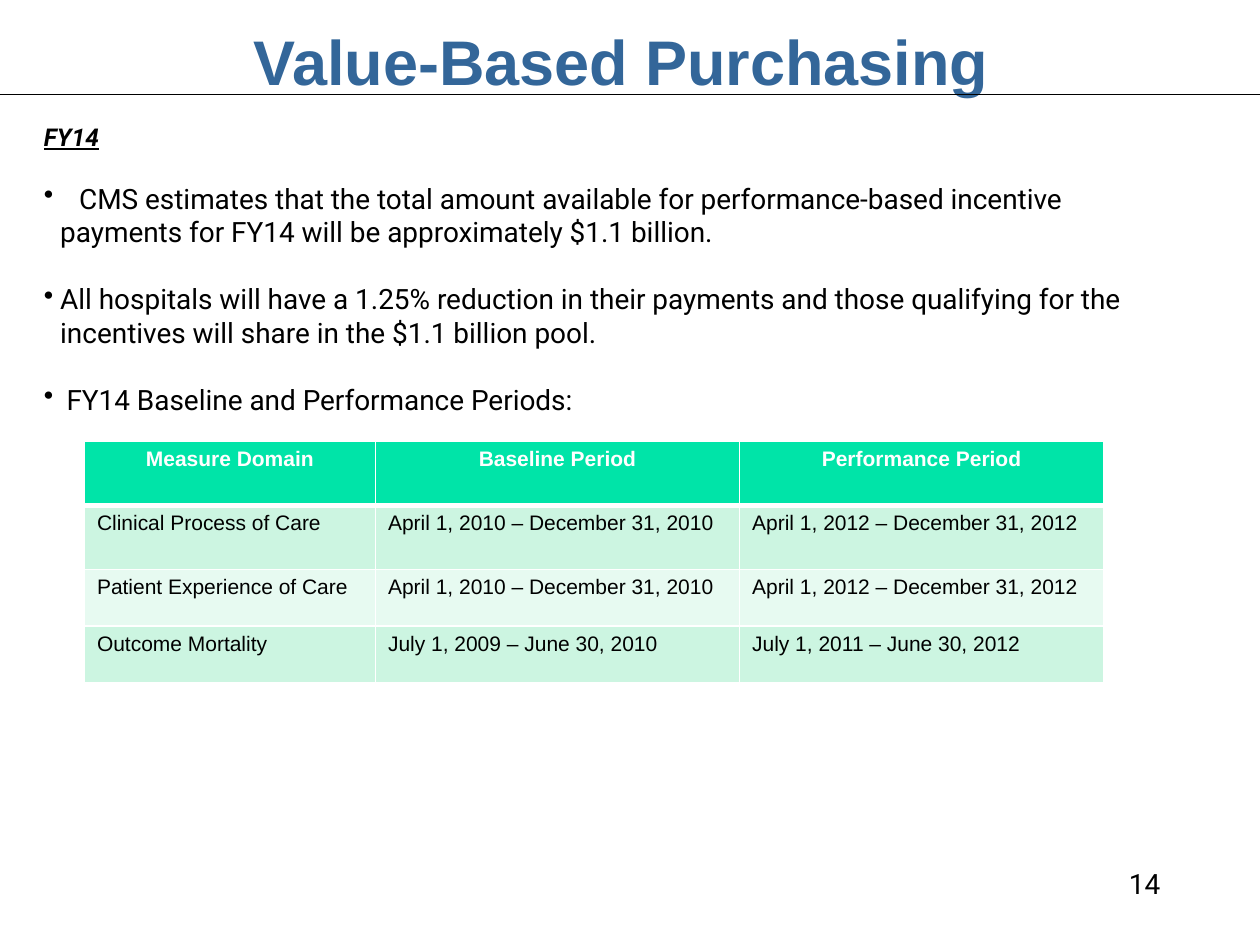
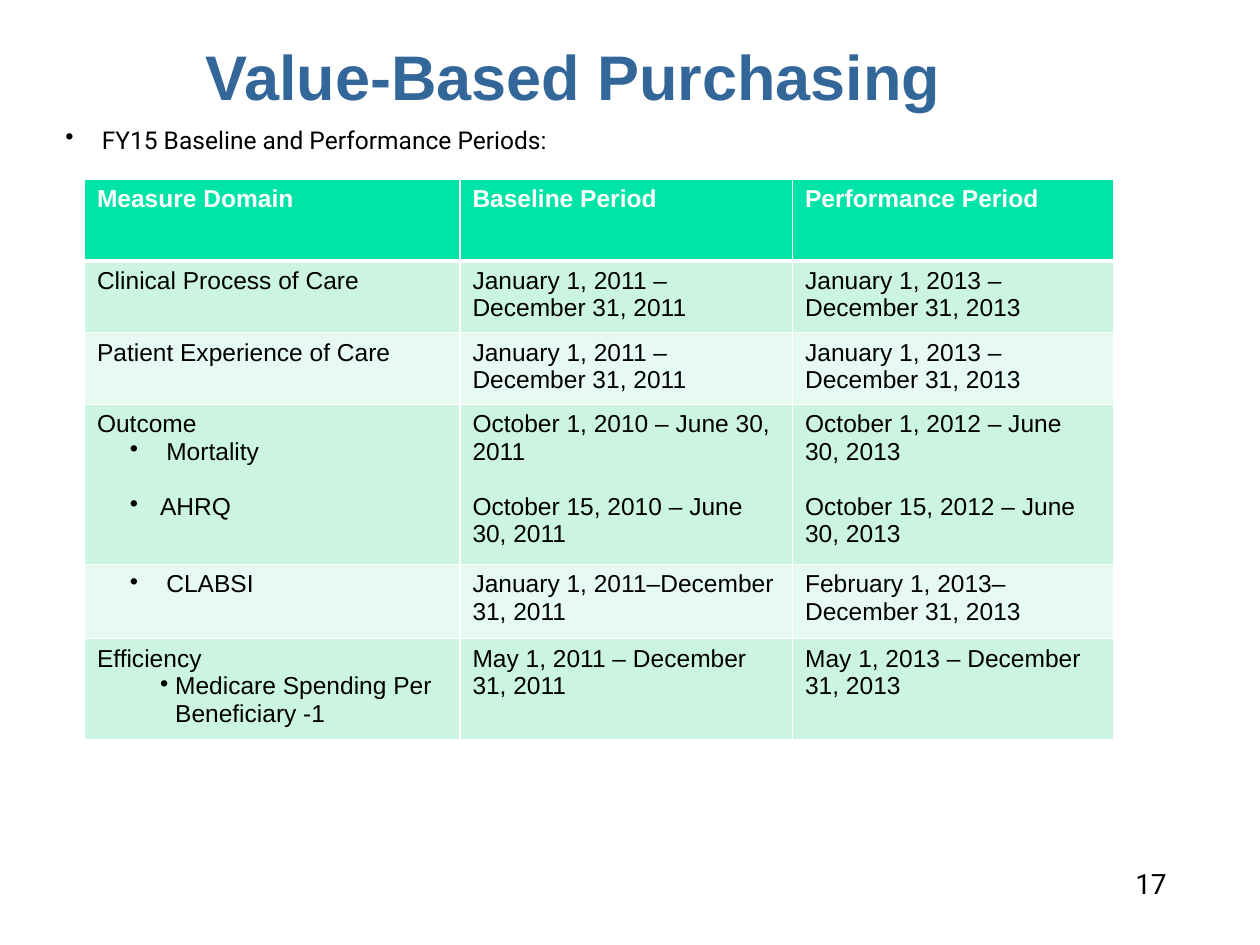
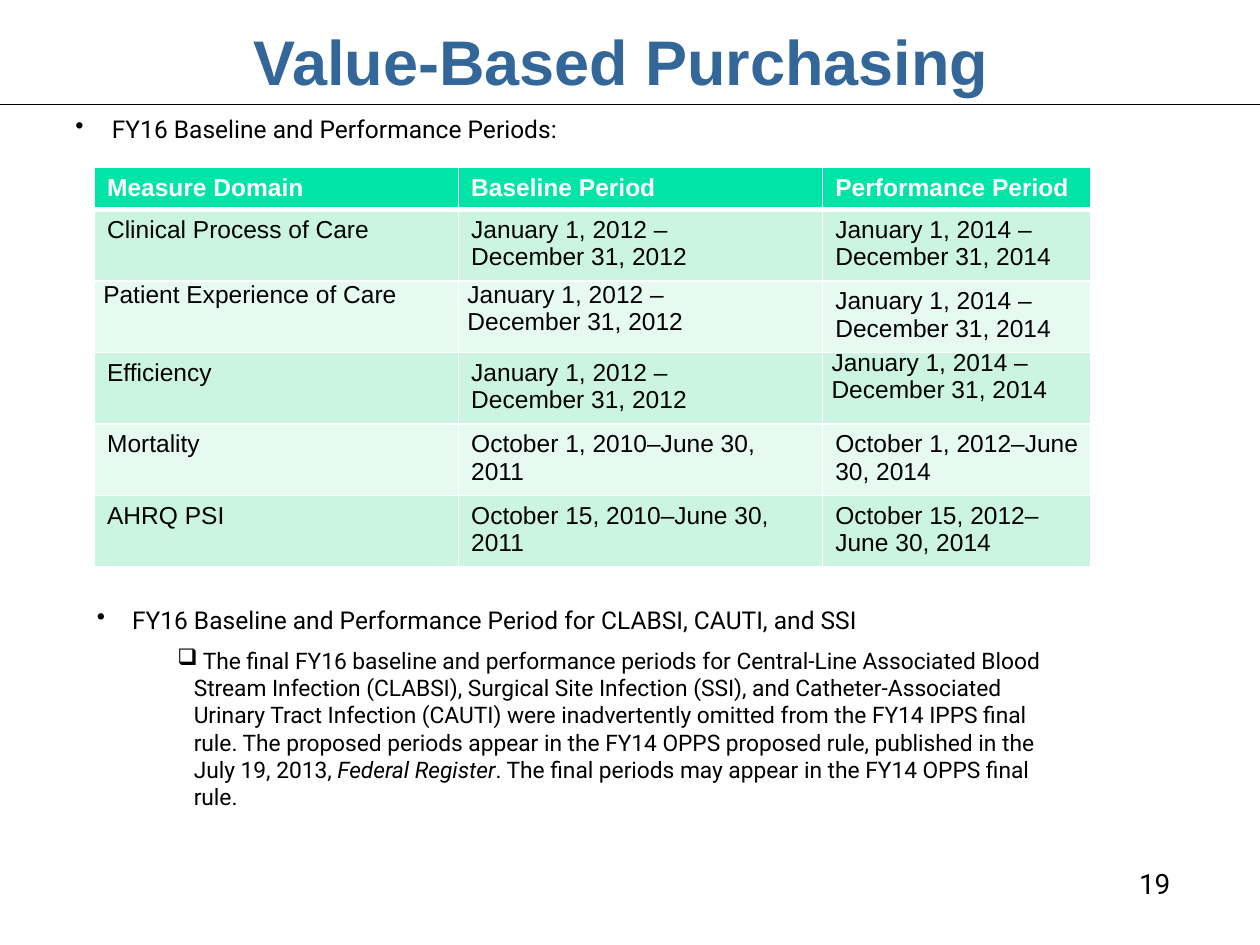
from lxml import etree
from pptx import Presentation
from pptx.dml.color import RGBColor
from pptx.enum import shapes, text
from pptx.oxml.ns import qn
from pptx.util import Inches, Pt

# Shared look
BLUE, BLACK, WHITE = "336699", "000000", "FFFFFF"
HEADER_GREEN, BAND_GREENS = "00E4A8", ("CCF5E1", "E7FAF1")
HEADING_FONT, BODY_FONT = "Arial", "Roboto"
TITLE = "Value-Based Purchasing"
HEADINGS = ["Measure Domain", "Baseline Period", "Performance Period"]
TIGHT = dict(margin=0.07)


def bullet(words, left, hang=None, before=0, mark="•"):
    return dict(words=words, left=left, hang=left if hang is None else hang,
                before=before, mark=mark)


# Content: notes are (box, size, paragraphs)
SLIDES = [
    dict(
        number="14", number_left=8.67, title_at=(0.43, 0.17), rule_y=0.75,
        notes=[((0.25, 0.92, 9.5, 2.5), 16, [
            dict(words="FY14", size=14, bold=True, italic=True, underline=True),
            bullet("CMS estimates that the total amount available for "
                   "performance-based incentive", 0.28, before=17),
            dict(words="payments for FY14 will be approximately $1.1 billion.", left=0.13),
            bullet("All hospitals will have a 1.25% reduction in their payments and those "
                   "qualifying for the incentives will share in the $1.1 billion pool.",
                   0.13, before=19),
            bullet("FY14 Baseline and Performance Periods:", 0.18, before=19),
        ])],
        table=dict(
            at=(0.67, 3.5), size=12, heading_align=text.PP_ALIGN.CENTER,
            widths=[2.31, 2.89, 2.89], heights=[0.51, 0.51, 0.45, 0.45],
            rows=[
                ["Clinical Process of Care", "April 1, 2010 – December 31, 2010",
                 "April 1, 2012 – December 31, 2012"],
                ["Patient Experience of Care", "April 1, 2010 – December 31, 2010",
                 "April 1, 2012 – December 31, 2012"],
                ["Outcome Mortality", "July 1, 2009 – June 30, 2010",
                 "July 1, 2011 – June 30, 2012"],
            ]),
    ),
    dict(
        number="17", number_left=8.72, title_at=(0.05, 0.29),
        notes=[((0.42, 0.94, 9.33, 0.37), 14,
                [bullet("FY15 Baseline and Performance Periods:", 0.29)])],
        table=dict(
            at=(0.67, 1.42), size=14,
            widths=[2.98, 2.64, 2.55], heights=[0.65, 0.57, 0.57, 1.27, 0.59, 0.8],
            rows=[
                ["Clinical Process of Care", "January 1, 2011 – December 31, 2011",
                 "January 1, 2013 – December 31, 2013"],
                ["Patient Experience of Care", "January 1, 2011 – December 31, 2011",
                 "January 1, 2013 – December 31, 2013"],
                [["Outcome", bullet("Mortality", 0.55, 0.29),
                  bullet("AHRQ", 0.5, 0.24, before=15.6)],
                 ["October 1, 2010 – June 30, 2011",
                  dict(words="October 15, 2010 – June 30, 2011", before=15.6)],
                 ["October 1, 2012 – June 30, 2013",
                  dict(words="October 15, 2012 – June 30, 2013", before=15.6)]],
                [[bullet("CLABSI", 0.55, 0.29)], "January 1, 2011–December 31, 2011",
                 "February 1, 2013–December 31, 2013"],
                [["Efficiency", bullet("Medicare Spending Per Beneficiary -1", 0.62, 0.12)],
                 "May 1, 2011 – December 31, 2011", "May 1, 2013 – December 31, 2013"],
            ]),
    ),
    dict(
        number="19", number_left=8.75, title_at=(0.43, 0.17), rule_y=0.83,
        notes=[
            ((0.5, 0.86, 8.25, 0.37), 14,
             [bullet("FY16 Baseline and Performance Periods:", 0.29)]),
            ((0.67, 4.75, 7.83, 0.34), 14,
             [bullet("FY16 Baseline and Performance Period for CLABSI, CAUTI, and SSI", 0.28)]),
            ((0.75, 5.08, 7.83, 1.41), 13, [bullet([
                (" The final FY16 baseline and performance periods for Central-Line Associated "
                 "Blood Stream Infection (CLABSI), Surgical Site Infection (SSI), and "
                 "Catheter-Associated Urinary Tract Infection (CAUTI) were inadvertently omitted "
                 "from the FY14 IPPS final rule. The proposed periods appear in the FY14 OPPS "
                 "proposed rule, published in the July 19, 2013, ", False),
                ("Federal Register", True),
                (". The final periods may appear in the FY14 OPPS final rule.", False),
            ], 0.69, 0.13, mark="❑")]),
        ],
        table=dict(
            at=(0.75, 1.33), size=14,
            widths=[2.89, 2.89, 2.13], heights=[0.3] + [0.53] * 5,
            tight_cells={(2, 0), (2, 1), (3, 2)},
            rows=[
                ["Clinical Process of Care", ["January 1, 2012 –", "December 31, 2012"],
                 ["January 1, 2014 –", "December 31, 2014"]],
                ["Patient Experience of Care", ["January 1, 2012 –", "December 31, 2012"],
                 ["January 1, 2014 –", "December 31, 2014"]],
                ["Efficiency", ["January 1, 2012 –", "December 31, 2012"],
                 [dict(words="January 1, 2014 –", leading=13.6), "December 31, 2014"]],
                ["Mortality", "October 1, 2010–June 30, 2011",
                 "October 1, 2012–June 30, 2014"],
                ["AHRQ PSI", "October 15, 2010–June 30, 2011",
                 "October 15, 2012–June 30, 2014"],
            ]),
    ),
]


def rgb(code):
    return RGBColor.from_string(code)


def write(frame, paragraphs, size, font, color=BLACK, bold=False, align=None):
    """Fill a text frame with strings or paragraph dicts."""
    frame.word_wrap = True
    for i, entry in enumerate(paragraphs):
        entry = entry if isinstance(entry, dict) else dict(words=entry)
        para = frame.paragraphs[0] if i == 0 else frame.add_paragraph()
        props = para._p.get_or_add_pPr()
        props.set("marL", str(Inches(entry.get("left", 0))))
        props.set("indent", str(-Inches(entry.get("hang", 0))))
        if "mark" in entry:
            etree.SubElement(props, qn("a:buChar"), char=entry["mark"])
        else:
            etree.SubElement(props, qn("a:buNone"))
        para.space_before = Pt(entry.get("before", 0))
        if "leading" in entry:
            para.line_spacing = Pt(entry["leading"])
        if align is not None:
            para.alignment = align
        para.font.name, para.font.size = font, Pt(entry.get("size", size))
        para.font.color.rgb = rgb(color)
        para.font.bold = entry.get("bold", bold)
        para.font.italic = entry.get("italic", False)
        para.font.underline = entry.get("underline", False)
        words = entry["words"]
        for part, italic in [(words, None)] if isinstance(words, str) else words:
            run = para.add_run()
            run.text = part
            if italic:
                run.font.italic = True


def add_note(slide, box, size, paragraphs, align=None):
    frame = slide.shapes.add_textbox(*map(Inches, box)).text_frame
    write(frame, paragraphs, size, BODY_FONT, align=align)


def add_title(slide, left, top):
    title = slide.shapes.title
    title.left, title.top, title.width, title.height = map(Inches, (left, top, 9, 0.62))
    frame = title.text_frame
    frame.auto_size = text.MSO_AUTO_SIZE.NONE
    frame.vertical_anchor = text.MSO_ANCHOR.MIDDLE
    write(frame, [TITLE], 36, HEADING_FONT, BLUE, True, text.PP_ALIGN.CENTER)


def add_rule(slide, y):
    rule = slide.shapes.add_connector(shapes.MSO_CONNECTOR.STRAIGHT,
                                      0, Inches(y), Inches(10), Inches(y))
    rule.line.color.rgb, rule.line.width = rgb(BLACK), Pt(0.75)
    etree.SubElement(rule._element.spPr, qn("a:effectLst"))


def style_cell(cell, fill, top, bottom):
    """White borders (widths in points), then the fill."""
    props = cell._tc.get_or_add_tcPr()
    for side, width in dict(L=1, R=1, T=top, B=bottom).items():
        line = etree.SubElement(props, qn(f"a:ln{side}"), w=str(Pt(width)))
        paint = etree.SubElement(line, qn("a:solidFill"))
        etree.SubElement(paint, qn("a:srgbClr"), val=WHITE)
    cell.fill.solid()
    cell.fill.fore_color.rgb = rgb(fill)


def add_periods(slide, at, size, widths, heights, rows, heading_align=None, tight_cells=()):
    box = map(Inches, (*at, sum(widths), sum(heights)))
    table = slide.shapes.add_table(len(heights), len(widths), *box).table
    for column, width in zip(table.columns, widths):
        column.width = Inches(width)
    for r, (height, row) in enumerate(zip(heights, [HEADINGS] + rows)):
        table.rows[r].height = Inches(height)
        heading = r == 0
        fill = HEADER_GREEN if heading else BAND_GREENS[(r - 1) % 2]
        for c, content in enumerate(row):
            cell = table.cell(r, c)
            style_cell(cell, fill, 3 if r == 1 else 1, 3 if heading else 1)
            if (r, c) in tight_cells:
                cell.margin_left = cell.margin_right = Inches(TIGHT["margin"])
                cell.margin_top = cell.margin_bottom = 0
            write(cell.text_frame, [content] if isinstance(content, str) else content,
                  size, HEADING_FONT, WHITE if heading else BLACK, heading,
                  heading_align if heading else None)


def main():
    deck = Presentation()
    deck.slide_width, deck.slide_height = Inches(10), Inches(7.5)
    title_only = deck.slide_layouts[5]
    for page in SLIDES:
        slide = deck.slides.add_slide(title_only)
        add_title(slide, *page["title_at"])
        if "rule_y" in page:
            add_rule(slide, page["rule_y"])
        for box, size, paragraphs in page["notes"]:
            add_note(slide, box, size, paragraphs)
        add_periods(slide, **page["table"])
        add_note(slide, (page["number_left"], 6.83, 0.83, 0.37), 16,
                 [page["number"]], text.PP_ALIGN.CENTER)
    deck.save("out.pptx")


if __name__ == "__main__":
    main()
